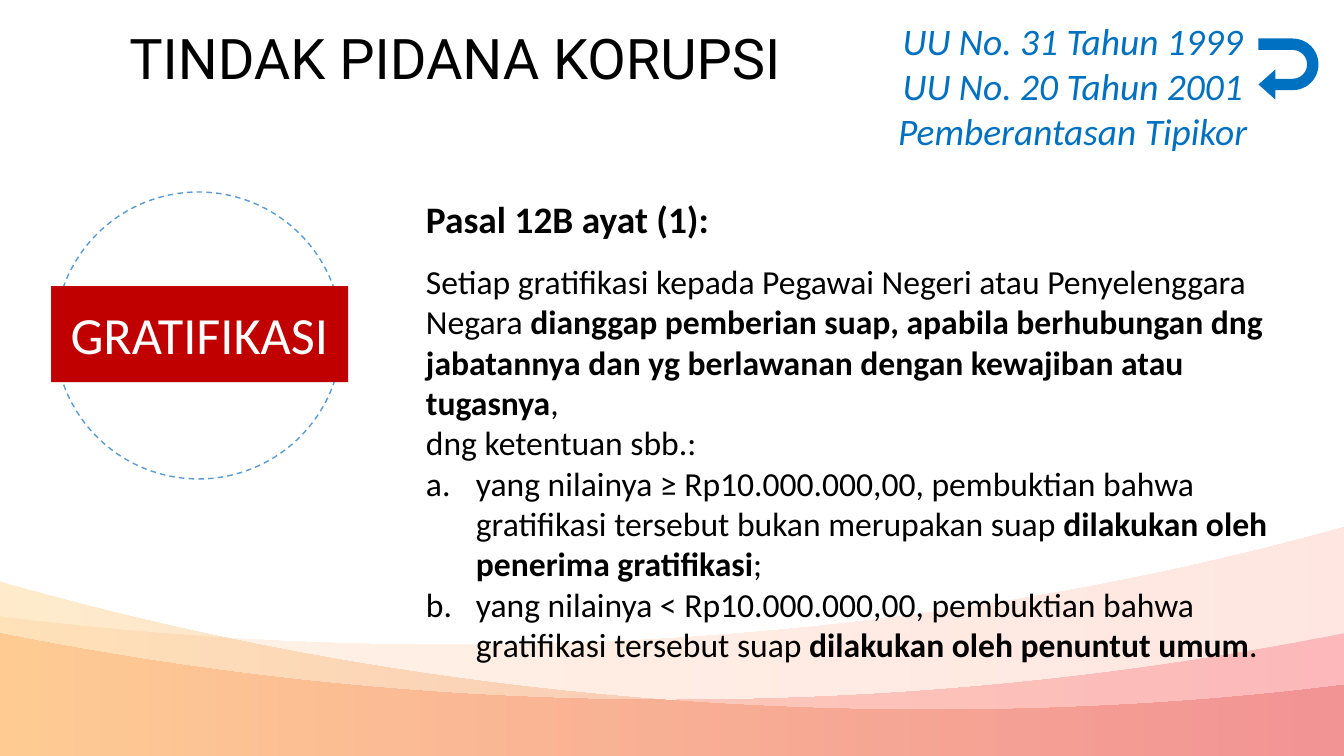
import pptx
import pptx.util
import pptx.dml.color
import pptx.enum.dml
import pptx.enum.shapes
import pptx.enum.text
import pptx.oxml.ns
import lxml.etree

SHAPE = pptx.enum.shapes.MSO_SHAPE
ALIGN = pptx.enum.text.PP_ALIGN
ANCHOR = pptx.enum.text.MSO_ANCHOR
FIT = pptx.enum.text.MSO_AUTO_SIZE
qn = pptx.oxml.ns.qn

PX = 914400 / 100.8
WIDTH, HEIGHT = 1344, 756
LEFT_EDGE, RIGHT_EDGE = -2, 1345
INDENT = 50
WAVE_ALPHA = 20

# Each wave: curve from its lowest point to the left, curve back from the right, colours, angle
WAVES = [
    ([(453, 645), (297, 645), (145, 635), (LEFT_EDGE, 616)],
     [(RIGHT_EDGE, 527), (1073, 603), (770, 645), (453, 645)], ("FFC486", "FF866B"), 0),
    ([(671, 700), (436, 700), (211, 676), (LEFT_EDGE, 633)],
     [(RIGHT_EDGE, 633), (1133, 676), (906, 700), (671, 700)], ("F20122", "FF6A00"), 180),
    ([(930, 710), (597, 710), (281, 663), (LEFT_EDGE, 581)],
     [(RIGHT_EDGE, 685), (1211, 702), (1072, 710), (930, 710)], ("FF9F00", "CC0000"), 0),
]

# A paragraph is a list of (text, bold) runs
TITLE = [[("TINDAK PIDANA KORUPSI", False)]]
TOPIC = [[("GRATIFIKASI", False)]]
LAWS = [[(law, False)] for law in
        ("UU No. 31 Tahun 1999", "UU No. 20 Tahun 2001", "Pemberantasan Tipikor")]
ARTICLE = [[("Pasal 12B ayat (1):", True)]]
RULE = [
    [("Setiap gratifikasi kepada Pegawai Negeri atau Penyelenggara Negara ", False),
     ("dianggap pemberian suap, apabila berhubungan dng jabatannya dan yg berlawanan "
      "dengan kewajiban atau tugasnya", True), (",", False)],
    [("dng ketentuan sbb.:", False)],
]
CONDITIONS = [
    [("yang nilainya ≥ Rp10.000.000,00, pembuktian bahwa gratifikasi tersebut "
      "bukan merupakan suap ", False),
     ("dilakukan oleh penerima gratifikasi", True), (";", False)],
    [("yang nilainya < Rp10.000.000,00, pembuktian bahwa gratifikasi tersebut suap ", False),
     ("dilakukan oleh penuntut umum", True), (".", False)],
]

TITLE_BOX = (0, 26, 910, 88)
CIRCLE_BOX = (55, 192, 287, 287)
TOPIC_BOX = (51, 286, 297, 96)
LAWS_BOX = (820, 13, 506, 146)
ARROW_BOX = (1258, 39, 61, 60)
ARTICLE_BOX = (416, 191, 506, 55)
RULE_BOX = (416, 256, 877, 417)
ARROW_ADJUSTMENTS = (0.19, 0.25, 0.28, 0.43, 1)


def emu(px):
    return round(px * PX)


def color(code):
    return pptx.dml.color.RGBColor.from_string(code)


def curve_through(segments):
    """Turn three line segments into one cubic curve with their ends as its points."""
    curve = lxml.etree.Element(qn("a:cubicBezTo"))
    segments[0].addprevious(curve)
    for segment in segments:
        curve.append(segment[0])
        segment.getparent().remove(segment)


def add_wave(slide, left_curve, right_curve, colors, angle):
    corners = [(LEFT_EDGE, HEIGHT), (RIGHT_EDGE, HEIGHT)]
    start, *points = left_curve + corners + right_curve
    builder = slide.shapes.build_freeform(*start, scale=PX)
    builder.add_line_segments(points, close=True)
    wave = builder.convert_to_shape()
    segments = list(wave._element.spPr.iter(qn("a:lnTo")))
    curve_through(segments[:3])
    curve_through(segments[-3:])

    wave.shadow.inherit = False
    wave.line.fill.background()
    wave.fill.gradient()
    wave.fill.gradient_angle = angle
    for stop, code in zip(wave.fill.gradient_stops, colors):
        stop.color.rgb = color(code)
    for rgb in wave._element.spPr.iter(qn("a:srgbClr")):
        lxml.etree.SubElement(rgb, qn("a:alpha")).set("val", str(WAVE_ALPHA * 1000))


def add_preset(slide, kind, box, fill=None, adjustments=()):
    shape = slide.shapes.add_shape(kind, *map(emu, box))
    shape.shadow.inherit = False
    if fill:
        shape.fill.solid()
        shape.fill.fore_color.rgb = color(fill)
        shape.line.fill.background()
    else:
        shape.fill.background()
    for index, value in enumerate(adjustments):
        shape.adjustments[index] = value
    return shape


def write(frame, paragraphs, frame_format, paragraph_format, size, code,
          font="Calibri", italic=False):
    for name, value in {"word_wrap": True, **frame_format}.items():
        setattr(frame, name, value)
    for index, runs in enumerate(paragraphs):
        paragraph = frame.add_paragraph() if index else frame.paragraphs[0]
        for name, value in paragraph_format.items():
            setattr(paragraph, name, value)
        for text, bold in runs:
            run = paragraph.add_run()
            run.text = text
            run.font.color.rgb = color(code)
            font_format = {"name": font, "size": pptx.util.Pt(size),
                           "bold": bold, "italic": italic}
            for name, value in font_format.items():
                setattr(run.font, name, value)


def add_text(slide, box, *args, **kwargs):
    frame = slide.shapes.add_textbox(*map(emu, box)).text_frame
    write(frame, *args, **kwargs)
    return frame


def letter(paragraph):
    """Number a paragraph a., b., ... with a hanging indent."""
    properties = paragraph._p.get_or_add_pPr()
    properties.set("marL", str(emu(INDENT)))
    properties.set("indent", str(-emu(INDENT)))
    lxml.etree.SubElement(properties, qn("a:buFont")).set("typeface", "+mj-lt")
    lxml.etree.SubElement(properties, qn("a:buAutoNum")).set("type", "alphaLcPeriod")


def main():
    deck = pptx.Presentation()
    deck.slide_width, deck.slide_height = emu(WIDTH), emu(HEIGHT)
    slide = deck.slides.add_slide(deck.slide_layouts[5])

    for wave in WAVES:
        add_wave(slide, *wave)

    title = slide.shapes.title
    for name, value in zip(("left", "top", "width", "height"), TITLE_BOX):
        setattr(title, name, emu(value))
    write(title.text_frame, TITLE, {"vertical_anchor": ANCHOR.TOP, "auto_size": FIT.NONE},
          {"alignment": ALIGN.CENTER, "line_spacing": 0.9}, 40, "000000", font="Roboto")

    circle = add_preset(slide, SHAPE.OVAL, CIRCLE_BOX)
    circle.line.color.rgb = color("5B9BD5")
    circle.line.width = pptx.util.Pt(1)
    circle.line.dash_style = pptx.enum.dml.MSO_LINE.DASH

    centered = {"alignment": ALIGN.CENTER}
    grow = {"auto_size": FIT.SHAPE_TO_FIT_TEXT}
    topic = add_preset(slide, SHAPE.BEVEL, TOPIC_BOX, "C00000", (0,))
    write(topic.text_frame, TOPIC, {"vertical_anchor": ANCHOR.MIDDLE}, centered, 37.3, "FFFFFF")

    add_text(slide, LAWS_BOX, LAWS, grow, centered, 26.7, "0070C0", italic=True)
    arrow = add_preset(slide, SHAPE.U_TURN_ARROW, ARROW_BOX, "0070C0", ARROW_ADJUSTMENTS)
    arrow.rotation = 90

    add_text(slide, ARTICLE_BOX, ARTICLE, grow, {}, 26.7, "000000")
    rule = add_text(slide, RULE_BOX, RULE + CONDITIONS, grow, {}, 24, "000000")
    for condition in rule.paragraphs[len(RULE):]:
        letter(condition)

    deck.save("out.pptx")


if __name__ == "__main__":
    main()
